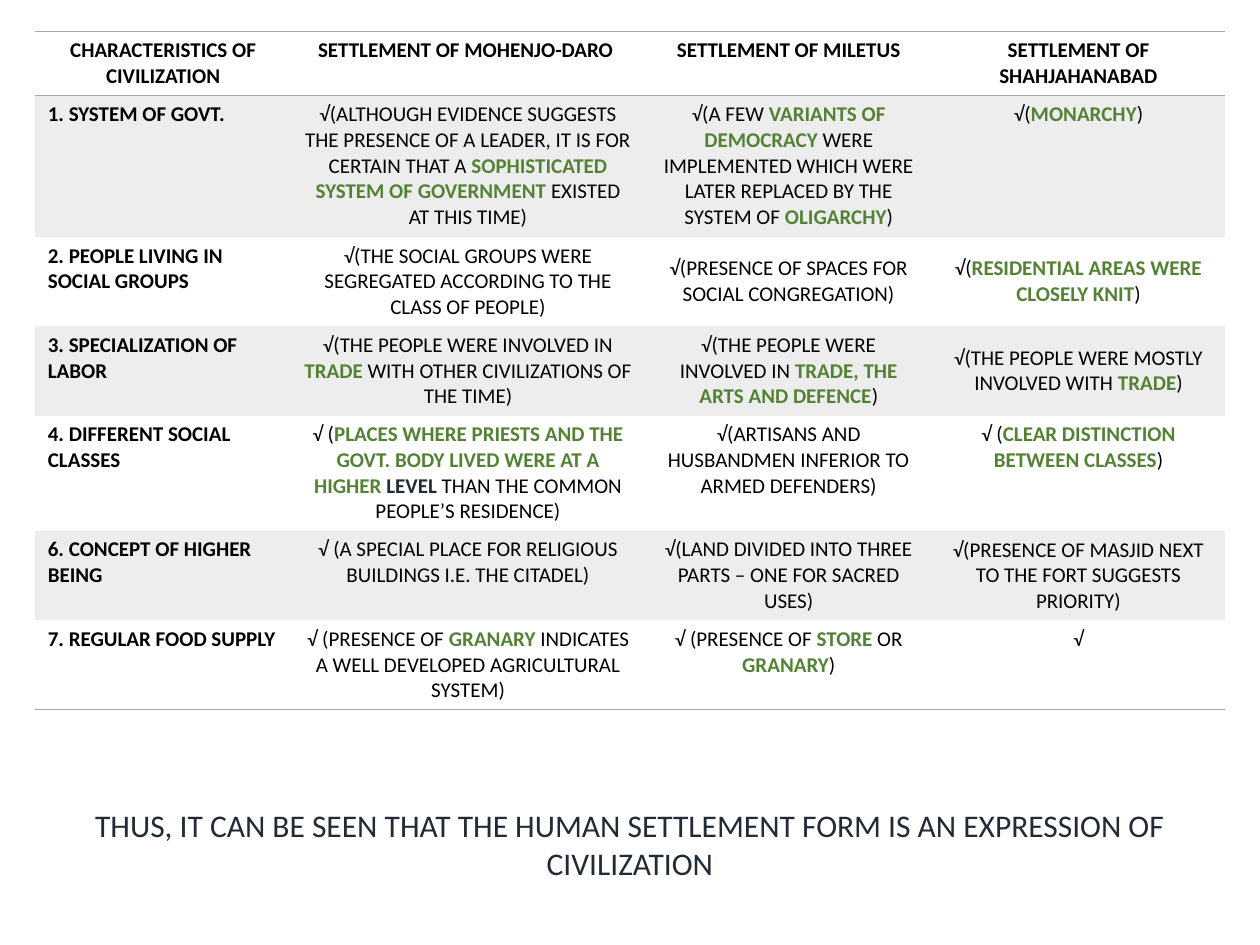
import pptx
import pptx.util
import pptx.dml.color
import pptx.enum.text
import pptx.oxml
import pptx.oxml.ns
from pptx.util import Inches

RGBColor = pptx.dml.color.RGBColor
BLACK = RGBColor(0x00, 0x00, 0x00)
GREEN = RGBColor(0x54, 0x82, 0x35)
NAVY = RGBColor(0x22, 0x2A, 0x35)
GRAY = RGBColor(0xA5, 0xA5, 0xA5)
BAND = RGBColor(0xED, 0xED, 0xED)
MARKS = {"+": GREEN, "#": NAVY}
NO_GRID = "{2D5ABB26-0587-4C30-8999-92F81FD0307C}"
ALIGN = pptx.enum.text.PP_ALIGN
MIDDLE = pptx.enum.text.MSO_ANCHOR.MIDDLE


def write(frame, text, size=12, color=BLACK, bold=False, align=ALIGN.CENTER):
    """Split text at | into runs; a leading + or # makes a run bold and coloured."""
    frame.word_wrap = True
    para = frame.paragraphs[0]
    para.alignment = align
    for part in text.split("|"):
        mark = MARKS.get(part[0])
        run = para.add_run()
        run.text = part[1:] if mark else part
        run.font.name = "Calibri"
        run.font.size = pptx.util.Pt(size)
        run.font.bold = bold or mark is not None
        run.font.color.rgb = mark or color


def rule(cell, side):
    """Draw a gray line on the T or B side of a cell."""
    line = pptx.oxml.parse_xml(
        f'<a:ln{side} {pptx.oxml.ns.nsdecls("a")} w="12700"><a:solidFill>'
        f'<a:srgbClr val="{GRAY}"/></a:solidFill></a:ln{side}>')
    cell._tc.get_or_add_tcPr().insert(0, line)


ROWS = [
    ["CHARACTERISTICS OF CIVILIZATION", "SETTLEMENT OF MOHENJO-DARO ",
     "SETTLEMENT OF MILETUS", "SETTLEMENT OF SHAHJAHANABAD"],
    ["1. SYSTEM OF GOVT.",
     "√(ALTHOUGH EVIDENCE SUGGESTS THE PRESENCE OF A LEADER, IT IS FOR CERTAIN THAT A "
     "|+SOPHISTICATED SYSTEM OF GOVERNMENT |EXISTED AT THIS TIME)",
     "√(A FEW |+VARIANTS OF DEMOCRACY |WERE IMPLEMENTED WHICH WERE LATER REPLACED BY "
     "THE SYSTEM OF |+OLIGARCHY|)",
     "√(|+MONARCHY|)"],
    ["2. PEOPLE LIVING IN SOCIAL GROUPS",
     "√(THE SOCIAL GROUPS WERE SEGREGATED ACCORDING TO THE CLASS OF PEOPLE)",
     "√(PRESENCE OF SPACES FOR SOCIAL CONGREGATION)",
     "√(|+RESIDENTIAL AREAS WERE CLOSELY KNIT|)"],
    ["3. SPECIALIZATION OF LABOR",
     "√(THE PEOPLE WERE INVOLVED IN |+TRADE| WITH OTHER CIVILIZATIONS OF THE TIME)",
     "√(THE PEOPLE WERE INVOLVED IN |+TRADE, THE ARTS AND DEFENCE|)",
     "√(THE PEOPLE WERE MOSTLY INVOLVED WITH |+TRADE|)"],
    ["4. DIFFERENT SOCIAL CLASSES",
     "√ (|+PLACES WHERE PRIESTS AND THE GOVT. BODY LIVED WERE AT A HIGHER |#LEVEL "
     "|THAN THE COMMON PEOPLE’S RESIDENCE)",
     "√(ARTISANS AND HUSBANDMEN INFERIOR TO ARMED DEFENDERS)",
     "√ (|+CLEAR DISTINCTION BETWEEN CLASSES|)"],
    ["6. CONCEPT OF HIGHER BEING",
     "√ (A SPECIAL PLACE FOR RELIGIOUS BUILDINGS I.E. THE CITADEL)",
     "√(LAND DIVIDED INTO THREE PARTS – ONE FOR SACRED USES)",
     "√(PRESENCE OF MASJID NEXT TO THE FORT SUGGESTS PRIORITY)"],
    ["7. REGULAR FOOD SUPPLY",
     "√ (PRESENCE OF |+GRANARY| INDICATES A WELL DEVELOPED AGRICULTURAL SYSTEM)",
     "√ (PRESENCE OF |+STORE| OR |+GRANARY|)",
     "√"],
]
WIDTHS = [2.03, 2.81, 2.28, 2.32]
HEIGHTS = [0.51, 1.12, 0.71, 0.71, 0.91, 0.71, 0.71]
CENTERED = {(2, 1), (2, 2), (2, 3), (3, 1), (3, 2), (3, 3), (5, 3)}

deck = pptx.Presentation()
deck.slide_width = Inches(10)
deck.slide_height = Inches(7.5)
slide = deck.slides.add_slide(deck.slide_layouts[6])

table = slide.shapes.add_table(
    len(ROWS), len(WIDTHS), Inches(0.28), Inches(0.25),
    Inches(sum(WIDTHS)), Inches(sum(HEIGHTS))).table
table._tbl.tblPr.find(pptx.oxml.ns.qn("a:tableStyleId")).text = NO_GRID
table.horz_banding = False
for col, width in zip(table.columns, WIDTHS):
    col.width = Inches(width)
for row, height in zip(table.rows, HEIGHTS):
    row.height = Inches(height)

last = len(ROWS) - 1
for r, texts in enumerate(ROWS):
    for c, text in enumerate(texts):
        cell = table.cell(r, c)
        label = c == 0 and r > 0
        write(cell.text_frame, text, bold=r == 0 or c == 0,
              align=ALIGN.LEFT if label else ALIGN.CENTER)
        if (r, c) in CENTERED:
            cell.vertical_anchor = MIDDLE
        if r % 2:
            cell.fill.solid()
            cell.fill.fore_color.rgb = BAND
        else:
            cell.fill.background()
        if r in (0, last):
            rule(cell, "B")
        if r == 0:
            rule(cell, "T")

closing = slide.shapes.add_textbox(
    Inches(0.31), Inches(6.35), Inches(9.38), Inches(0.71))
write(closing.text_frame,
      "THUS, IT CAN BE SEEN THAT THE HUMAN SETTLEMENT FORM IS AN EXPRESSION OF CIVILIZATION",
      size=18, color=NAVY)

deck.save("out.pptx")
